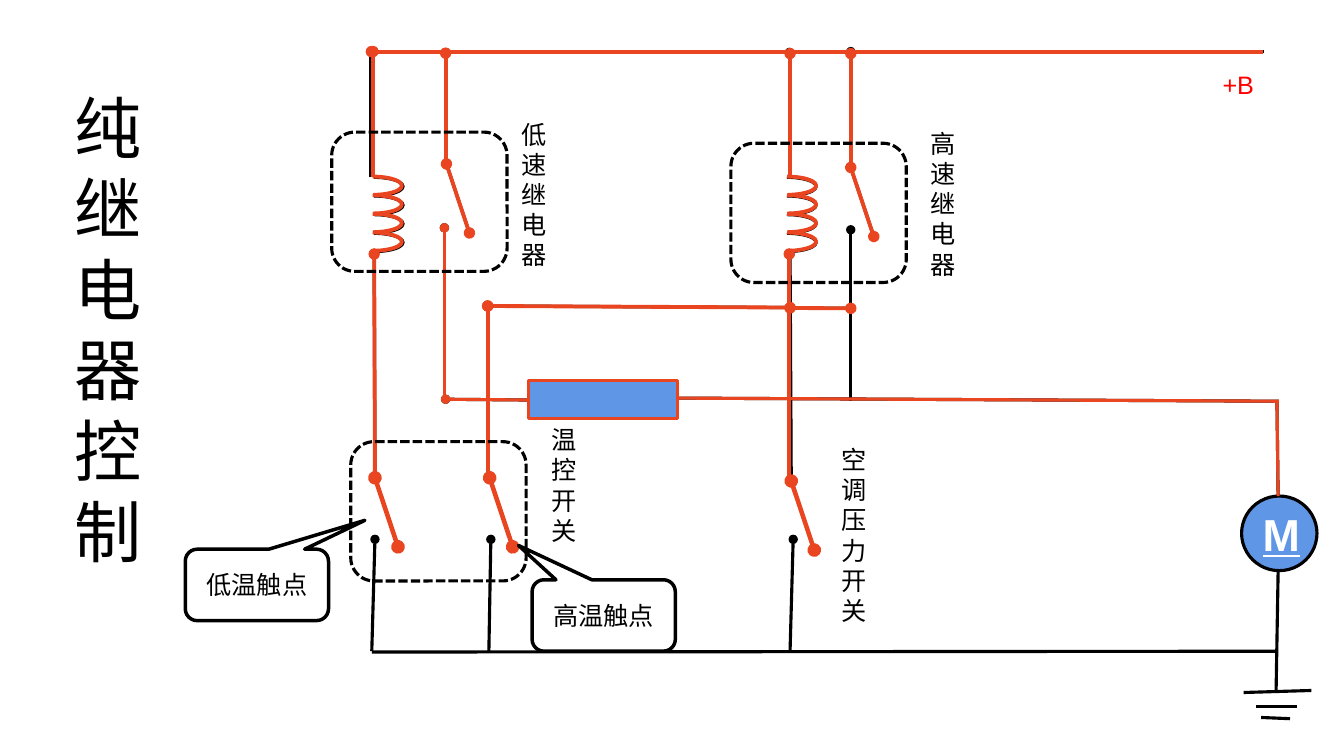
from pptx import Presentation
from pptx.dml.color import RGBColor
from pptx.enum.dml import MSO_LINE_DASH_STYLE as Dash
from pptx.enum.shapes import MSO_CONNECTOR as Conn, MSO_SHAPE as Kind
from pptx.enum.text import MSO_ANCHOR as Anchor, PP_ALIGN as Align
from pptx.oxml.ns import qn
from pptx.util import Cm, Pt
from lxml.etree import SubElement

BLACK = RGBColor(0x00, 0x00, 0x00)
LIVE = RGBColor(0xE9, 0x45, 0x20)
BLUE = RGBColor(0x60, 0x96, 0xE6)
RED = RGBColor(0xFF, 0x00, 0x00)
WHITE = RGBColor(0xFF, 0xFF, 0xFF)

prs = Presentation()
prs.slide_width, prs.slide_height = Cm(33.87), Cm(19.05)
slide = prs.slides.add_slide(prs.slide_layouts[6])
shapes = slide.shapes


def wire(ends, dots, color, width):
    """Draw a line; dots counts the round ends: 1 at the far end, 2 at both."""
    line = shapes.add_connector(Conn.STRAIGHT, *[Cm(v) for v in ends])
    line.line.color.rgb = color
    line.line.width = Pt(width)
    ln = line.line._get_or_add_ln()
    for tag in ("a:headEnd", "a:tailEnd")[2 - dots:]:
        SubElement(ln, qn(tag)).set("type", "oval")
    SubElement(line._element.spPr, qn("a:effectLst"))


def part(kind, box, color, width, fill=None):
    """Add a preset shape with a plain outline."""
    shape = shapes.add_shape(kind, *[Cm(v) for v in box])
    shape.shadow.inherit = False
    shape.line.color.rgb = color
    shape.line.width = Pt(width)
    if fill is None:
        shape.fill.background()
    else:
        shape.fill.solid()
        shape.fill.fore_color.rgb = fill
    return shape


# Motor
motor = part(Kind.OVAL, (31.29, 12.5, 1.9, 1.88), BLACK, 2.25, BLUE)
frame = motor.text_frame
frame.vertical_anchor = Anchor.MIDDLE
para = frame.paragraphs[0]
para.alignment = Align.CENTER
run = para.add_run()
run.text = "M"
font = run.font
font.name, font.size, font.color.rgb = "Arial", Pt(32), WHITE
font.bold = font.underline = True

# Ground symbol and return wires
ground = [
    ((33.05, 17.4, 31.34, 17.45), 0),
    ((32.69, 17.81, 31.65, 17.81), 0),
    ((32.51, 18.11, 31.78, 18.08), 0),
    ((9.37, 16.41, 9.45, 13.59), 1),
    ((12.32, 16.41, 12.37, 13.59), 1),
    ((19.91, 16.41, 19.99, 13.59), 1),
    ((32.16, 17.4, 32.21, 14.4), 0),
    ((9.37, 16.43, 32.18, 16.41), 0),
    ((21.44, 10.11, 21.44, 5.79), 1),
]
for ends, dots in ground:
    wire(ends, dots, BLACK, 2.25)

# Live circuit: black base wires, then the current path on top
motor_feed = [
    ((32.21, 12.5, 32.18, 10.08), 0),
    ((32.23, 10.11, 16.94, 10.03), 1),
    ((11.2, 10.06, 11.2, 5.74), 1),
    ((13.31, 10.08, 11.23, 10.06), 1),
]
control = [
    ((9.45, 12.04, 9.43, 6.4), 1),
    ((11.23, 4.14, 11.23, 1.34), 1),
    ((12.29, 12.02, 12.29, 7.71), 1),
    ((19.91, 7.75, 12.29, 7.71), 2),
    ((21.44, 7.77, 19.91, 7.76), 2),
]
base_feed = [
    (31.86, 1.3, 9.36, 1.3),
    (9.35, 4.47, 9.35, 1.3),
    (19.89, 4.4, 19.89, 1.32),
    (21.44, 4.09, 21.44, 1.3),
    (19.94, 12.04, 19.91, 6.4),
]
live_feed = [
    (31.84, 1.3, 9.36, 1.3),
    (9.4, 4.45, 9.4, 1.3),
    (19.91, 4.45, 19.91, 1.35),
    (21.44, 4.14, 21.44, 1.35),
    (19.89, 12.02, 19.89, 6.4),
]
relay_arms = [(11.25, 4.13), (21.44, 4.22)]
sense_arms = [(9.45, 12.04), (12.34, 12.04), (19.94, 12.12)]
layers = [
    (BLACK, 2.25, 2.25, base_feed, (8.69, 19.1), 4.47),
    (LIVE, 2.75, 3.25, live_feed, (8.66, 19.1), 4.45),
]
for color, thin, thick, feed, coils, top in layers:
    for arms, width in ((relay_arms, thin), (sense_arms, thick)):
        for x, y in arms:
            wire((x + 0.58, y + 1.74, x, y), 2, color, width)
    for left in coils:
        for turn in range(4):
            arc = part(Kind.ARC, (left, top + turn * 0.47, 1.47, 0.46), color, thin)
            arc.adjustments[0], arc.adjustments[1] = 162, 51.77
    for ends in feed:
        wire(ends, 1, color, thin)
    for ends, dots in control:
        wire(ends, dots, color, thin)
    for ends, dots in motor_feed:
        wire(ends, dots, color, 2.25)

# Resistor
part(Kind.RECTANGLE, (13.31, 9.58, 3.76, 0.97), LIVE, 2.25, BLUE)

# Dashed housings
for x, y in ((8.36, 3.33), (18.42, 3.61), (8.84, 11.13)):
    case = part(Kind.ROUNDED_RECTANGLE, (x, y, 4.42, 3.51), BLACK, 2.25)
    case.line.dash_style = Dash.SQUARE_DOT

# Labels
labels = [
    ("+B", (30.56, 1.63, 1.3, 1.02), 18, RED, False, None),
    ("纯继电器控制", (1.55, 2.06, 2.36, 12.57), 48, BLACK, True, Align.CENTER),
    ("低速继电器", (12.9, 2.87, 0.97, 4.09), 18, BLACK, True, None),
    ("高速继电器", (23.19, 3.1, 0.97, 4.09), 18, BLACK, True, None),
    ("温控开关", (13.64, 10.57, 0.97, 3.33), 18, BLACK, True, None),
    ("空调压力开关", (20.96, 11.07, 0.97, 4.88), 18, BLACK, True, None),
]
for text, box, size, color, wrap, align in labels:
    frame = shapes.add_textbox(*[Cm(v) for v in box]).text_frame
    frame.word_wrap = wrap
    para = frame.paragraphs[0]
    para.alignment = align
    run = para.add_run()
    run.text = text
    run.font.name, run.font.size = "Arial", Pt(size)
    run.font.color.rgb = color

# Contact callouts
tips = [
    ("低温触点", 4.67, 13.84, (0.754, -0.904)),
    ("高温触点", 13.41, 14.61, (-0.595, -0.98)),
]
for text, x, y, tip in tips:
    note = part(Kind.ROUNDED_RECTANGULAR_CALLOUT, (x, y, 3.61, 1.8), BLACK, 2.5)
    note.adjustments[0], note.adjustments[1] = tip
    frame = note.text_frame
    frame.vertical_anchor = Anchor.MIDDLE
    para = frame.paragraphs[0]
    para.alignment = Align.CENTER
    run = para.add_run()
    run.text = text
    run.font.name, run.font.size = "Arial", Pt(18)
    run.font.color.rgb = BLACK

prs.save("out.pptx")
